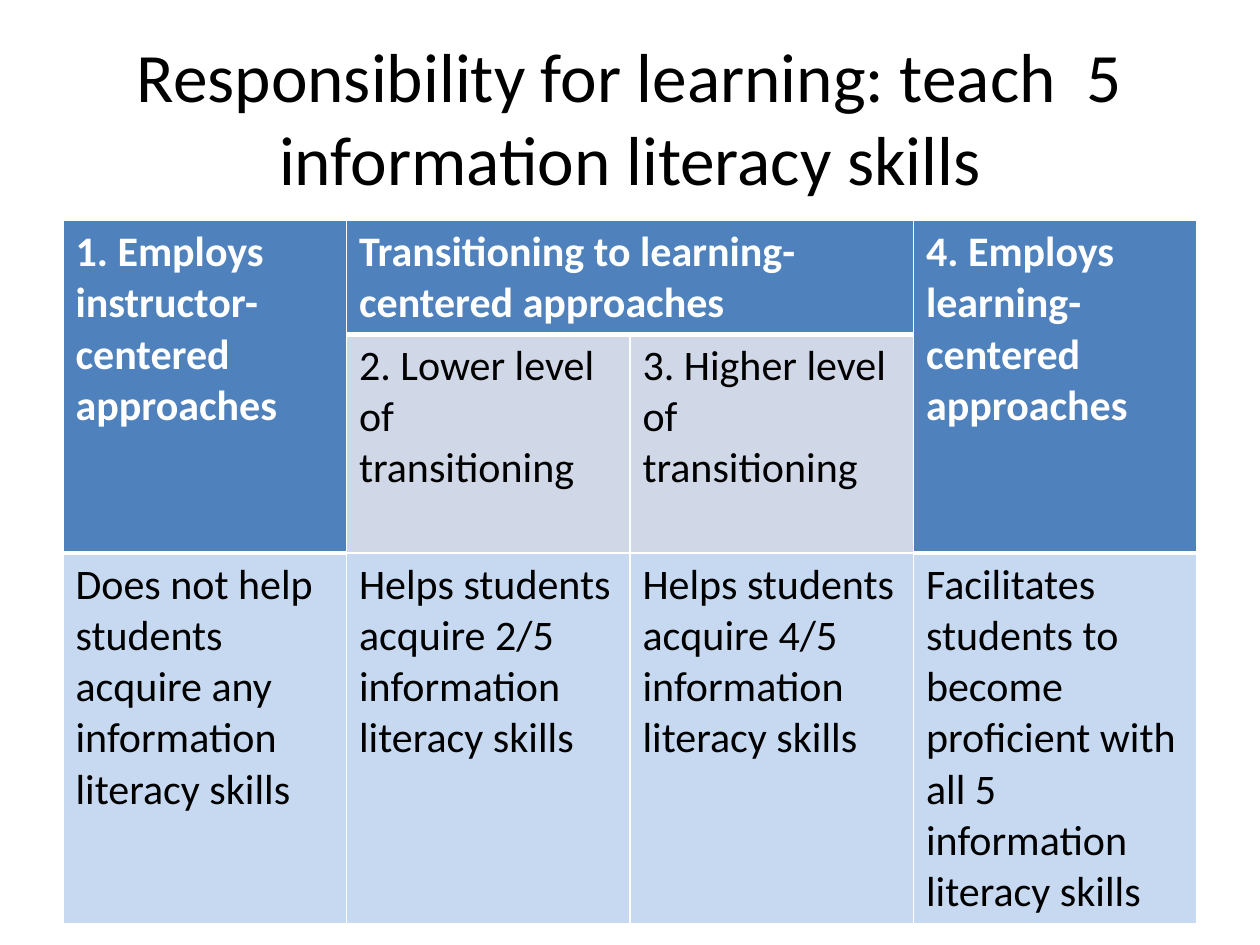
"""Build the slide on responsibility for learning as a title over a rubric table."""
from lxml import etree
from pptx import Presentation
from pptx.dml.color import RGBColor
from pptx.enum.text import MSO_ANCHOR, PP_ALIGN
from pptx.oxml.ns import qn
from pptx.util import Pt

CENTER, LEFT = PP_ALIGN.CENTER, PP_ALIGN.LEFT
MIDDLE, TOP = MSO_ANCHOR.MIDDLE, MSO_ANCHOR.TOP

THEME = {
    "font": "Calibri", "title": 39.6, "body": 24,
    "black": "000000", "white": "FFFFFF",
    "header": "4F81BD", "level": "D0D8E8", "outcome": "C6D9F1",
    "thin": 1, "thick": 3,
}

TITLE = "Responsibility for learning: teach  5 information literacy skills"
TITLE_BOX = (36, 21.6, 648, 90)
CELLS = [
    ["1. Employs instructor-centered approaches",
     "Transitioning to learning-centered approaches", "",
     "4. Employs learning-centered approaches"],
    ["", "2. Lower level of transitioning",
     "3. Higher level of transitioning", ""],
    ["Does not help students acquire any information literacy skills",
     "Helps students acquire 2/5 information literacy skills",
     "Helps students acquire 4/5 information literacy skills",
     "Facilitates students to become proficient with all 5 information literacy skills"],
]
FILLS = [
    ["header"] * 4,
    ["header", "level", "level", "header"],
    ["outcome"] * 4,
]
MERGES = [((0, 0), (1, 0)), ((0, 1), (0, 2)), ((0, 3), (1, 3))]
TABLE_LEFT, TABLE_TOP, COLUMN_WIDTH = 36, 126, 162
ROW_HEIGHTS = [65, 125, 212]


def write(frame, text, size, color, bold=False, align=LEFT):
    """Put one formatted paragraph into a text frame."""
    para = frame.paragraphs[0]
    para.alignment = align
    span = para.add_run()
    span.text = text
    span.font.name = THEME["font"]
    span.font.size = Pt(size)
    span.font.bold = bold
    span.font.color.rgb = RGBColor.from_string(color)


def add_border(cell, side, width):
    """Draw one white edge of a table cell."""
    properties = cell._tc.get_or_add_tcPr()
    line = etree.SubElement(properties, qn(f"a:ln{side}"), w=str(Pt(width)))
    fill = etree.SubElement(line, qn("a:solidFill"))
    etree.SubElement(fill, qn("a:srgbClr"), val=THEME["white"])


def edge_width(row, column):
    """Give the width of the edge below a cell: thick under a header."""
    is_header = row >= 0 and FILLS[row][column] == "header"
    return THEME["thick" if is_header else "thin"]


def add_title(page):
    """Add the centred title."""
    box = page.shapes.add_textbox(*map(Pt, TITLE_BOX))
    box.text_frame.word_wrap = True
    box.text_frame.vertical_anchor = MIDDLE
    write(box.text_frame, TITLE, THEME["title"], THEME["black"], align=CENTER)


def add_rubric(page):
    """Add the rubric with its merged header cells."""
    columns = len(CELLS[0])
    table = page.shapes.add_table(
        len(CELLS), columns, Pt(TABLE_LEFT), Pt(TABLE_TOP),
        Pt(COLUMN_WIDTH * columns), Pt(sum(ROW_HEIGHTS))).table
    for column in table.columns:
        column.width = Pt(COLUMN_WIDTH)
    for row, height in zip(table.rows, ROW_HEIGHTS):
        row.height = Pt(height)
    for first, last in MERGES:
        table.cell(*first).merge(table.cell(*last))
    for row, texts in enumerate(CELLS):
        for column, text in enumerate(texts):
            cell = table.cell(row, column)
            kind = FILLS[row][column]
            widths = {"L": THEME["thin"], "R": THEME["thin"],
                      "T": edge_width(row - 1, column),
                      "B": edge_width(row, column)}
            for side, width in widths.items():
                add_border(cell, side, width)
            cell.fill.solid()
            cell.fill.fore_color.rgb = RGBColor.from_string(THEME[kind])
            cell.vertical_anchor = TOP
            if text:
                is_header = kind == "header"
                write(cell.text_frame, text, THEME["body"],
                      THEME["white" if is_header else "black"], bold=is_header)


def main():
    """Build and save the deck."""
    deck = Presentation()
    deck.slide_width, deck.slide_height = Pt(720), Pt(540)
    page = deck.slides.add_slide(deck.slide_layouts[6])
    add_title(page)
    add_rubric(page)
    deck.save("out.pptx")


if __name__ == "__main__":
    main()
